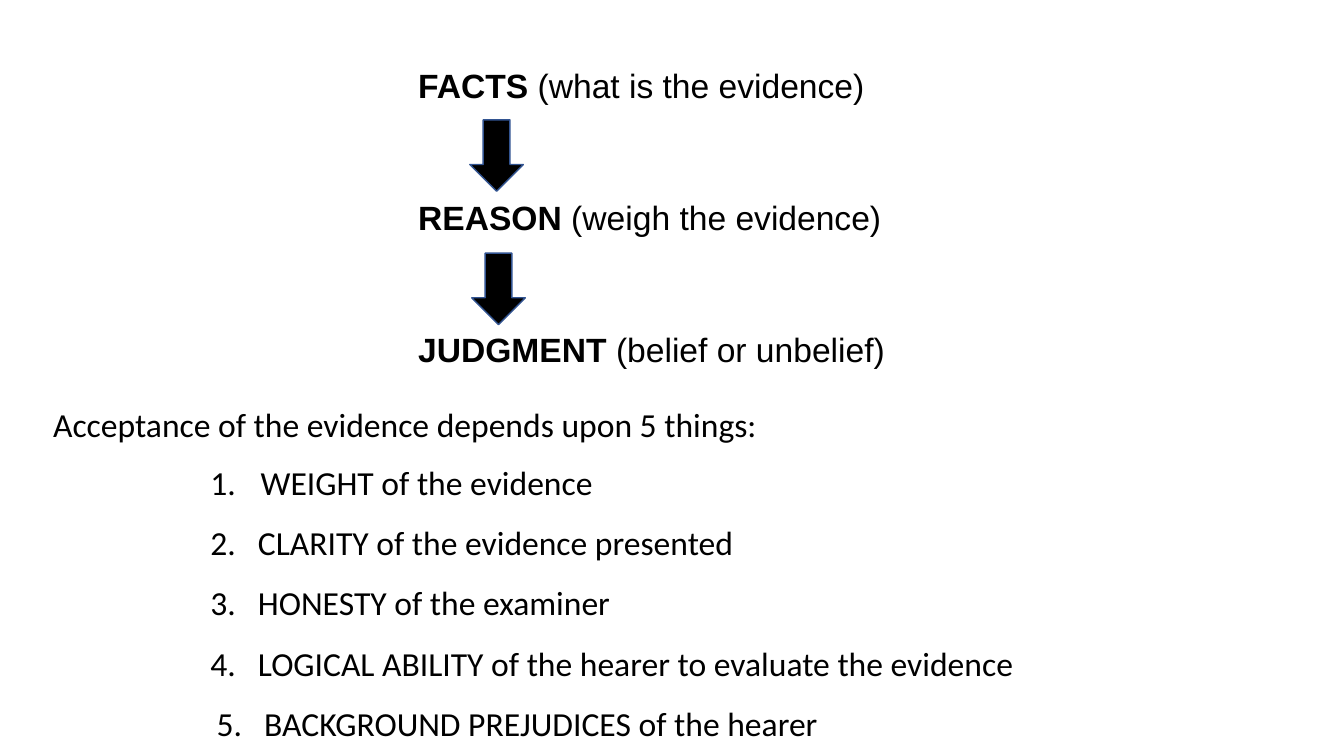
"""Build a slide leading from facts to judgment, with five conditions for accepting evidence."""
from lxml.etree import SubElement
from pptx import Presentation
from pptx.dml.color import RGBColor
from pptx.enum.shapes import MSO_SHAPE
from pptx.oxml.ns import qn
from pptx.util import Cm, Pt

COLORS = {"text": "000000", "arrow": "000000", "arrow_line": "325491"}


def add_text(page, left, top, width, font_name, spans):
    """Add a one-line text box from (text, bold) spans and return its paragraph."""
    box = page.shapes.add_textbox(Cm(left), Cm(top), Cm(width), Cm(1.27))
    box.text_frame.word_wrap = True
    para = box.text_frame.paragraphs[0]
    for text, bold in spans:
        span = para.add_run()
        span.text = text
        span.font.name = font_name
        span.font.size = Pt(24)
        span.font.bold = bold
        span.font.color.rgb = RGBColor.from_string(COLORS["text"])
    return para


deck = Presentation()
deck.slide_width = Cm(33.87)
deck.slide_height = Cm(19.05)
page = deck.slides.add_slide(deck.slide_layouts[6])

steps = [
    ("FACTS", " (what is the evidence)", 11.86),
    ("REASON", " (weigh the evidence)", 12.32),
    ("JUDGMENT", " (belief or unbelief)", 12.4),
]
for index, (name, meaning, width) in enumerate(steps):
    add_text(page, 10.29, 1.5 + 3.33 * index, width, "Arial", [(name, True), (meaning, False)])

for left, top in [(11.84, 3.02), (11.89, 6.38)]:
    arrow = page.shapes.add_shape(MSO_SHAPE.DOWN_ARROW, Cm(left), Cm(top), Cm(1.35), Cm(1.8))
    arrow.shadow.inherit = False
    arrow.fill.solid()
    arrow.fill.fore_color.rgb = RGBColor.from_string(COLORS["arrow"])
    arrow.line.color.rgb = RGBColor.from_string(COLORS["arrow_line"])
    arrow.line.width = Pt(1)

add_text(page, 1.09, 10.06, 18.42, "Calibri",
         [("Acceptance of the evidence depends upon 5 things:", False)])

conditions = [
    ("WEIGHT of the evidence", 5.05, 10.26, 1.27),
    ("CLARITY of the evidence presented", 5.05, 13.84, 1.2),
    ("HONESTY of the examiner", 5.05, 10.69, 1.2),
    ("LOGICAL ABILITY of the hearer to evaluate the evidence", 5.05, 20.96, 1.2),
    ("BACKGROUND PREJUDICES of the hearer", 5.21, 15.8, 1.2),
]
for number, (condition, left, width, indent) in enumerate(conditions, start=1):
    top = 11.51 + 1.52 * (number - 1)
    para = add_text(page, left, top, width, "Calibri", [(condition, False)])
    properties = para._p.get_or_add_pPr()
    properties.set("marL", str(Cm(indent)))
    properties.set("indent", str(-Cm(indent)))
    SubElement(properties, qn("a:buFont"), typeface="Calibri")
    SubElement(properties, qn("a:buAutoNum"), type="arabicPeriod", startAt=str(number))

deck.save("out.pptx")
